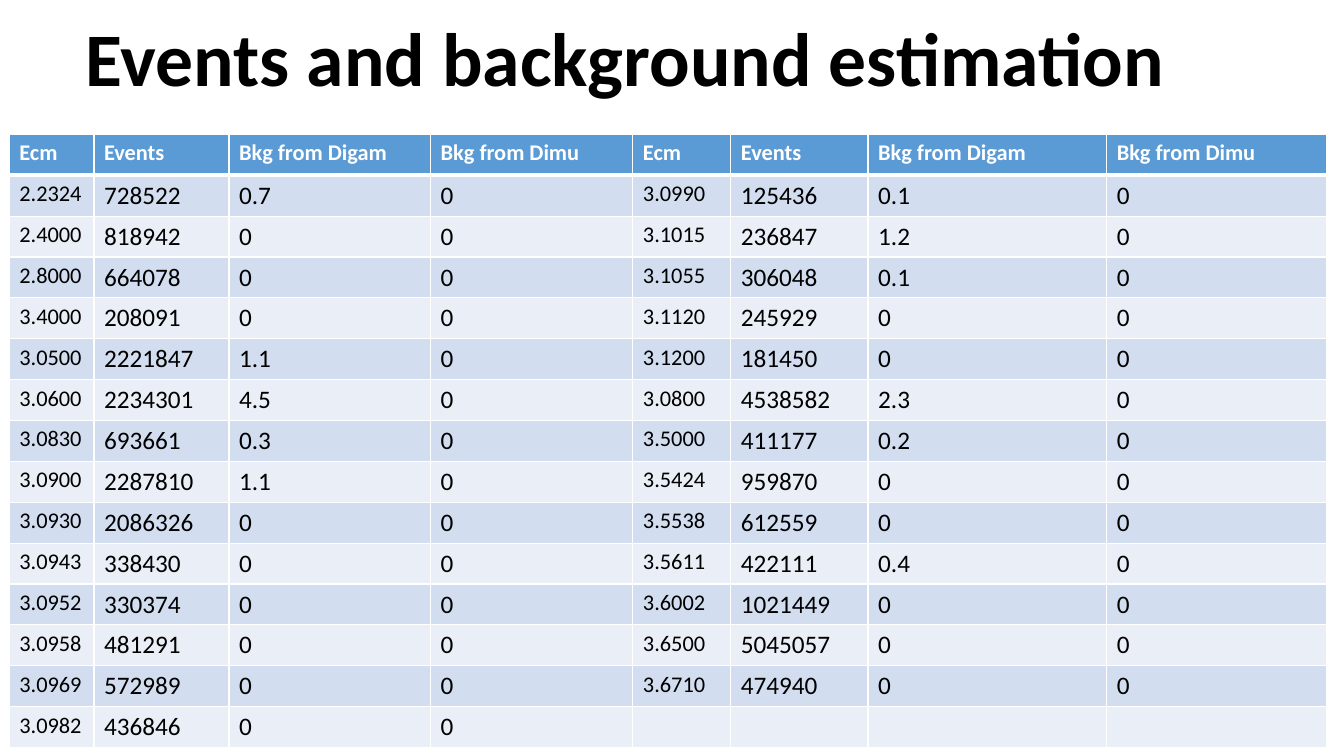
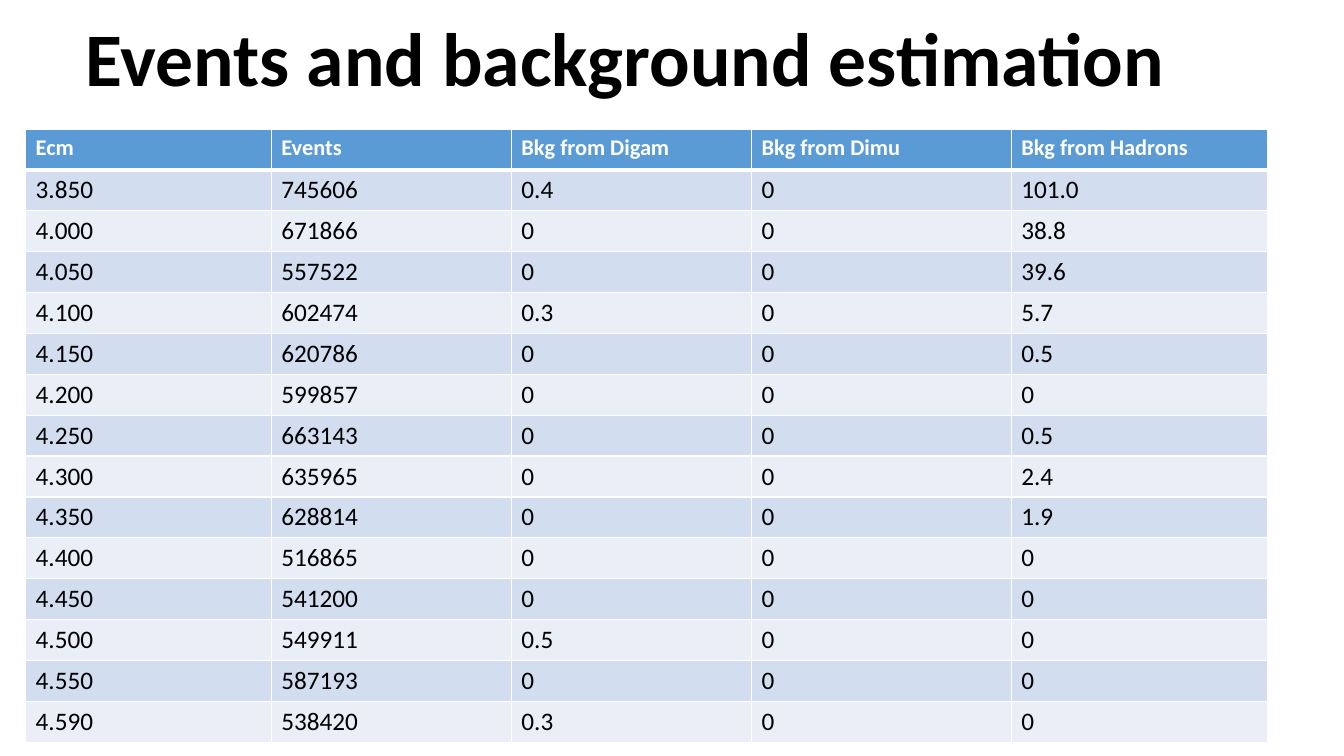
from lxml.etree import SubElement
from pptx import Presentation
from pptx.dml.color import RGBColor
from pptx.enum.text import MSO_ANCHOR, MSO_AUTO_SIZE, PP_ALIGN
from pptx.oxml.ns import qn
from pptx.util import Pt

COLORS = {"header": "5B9BD5", "odd": "D2DEEF", "even": "EAEFF7",
          "white": "FFFFFF", "text": "000000"}
FONT = "Calibri"
TITLE = "Events and background estimation"
ROW_HEIGHT = 29.17
HEADINGS = ("Ecm", "Events", "Bkg from Digam", "Bkg from Dimu")

LOW_ENERGIES = [
    ("2.2324", "728522", "0.7", "0"),
    ("2.4000", "818942", "0", "0"),
    ("2.8000", "664078", "0", "0"),
    ("3.4000", "208091", "0", "0"),
    ("3.0500", "2221847", "1.1", "0"),
    ("3.0600", "2234301", "4.5", "0"),
    ("3.0830", "693661", "0.3", "0"),
    ("3.0900", "2287810", "1.1", "0"),
    ("3.0930", "2086326", "0", "0"),
    ("3.0943", "338430", "0", "0"),
    ("3.0952", "330374", "0", "0"),
    ("3.0958", "481291", "0", "0"),
    ("3.0969", "572989", "0", "0"),
    ("3.0982", "436846", "0", "0"),
]
MIDDLE_ENERGIES = [
    ("3.0990", "125436", "0.1", "0"),
    ("3.1015", "236847", "1.2", "0"),
    ("3.1055", "306048", "0.1", "0"),
    ("3.1120", "245929", "0", "0"),
    ("3.1200", "181450", "0", "0"),
    ("3.0800", "4538582", "2.3", "0"),
    ("3.5000", "411177", "0.2", "0"),
    ("3.5424", "959870", "0", "0"),
    ("3.5538", "612559", "0", "0"),
    ("3.5611", "422111", "0.4", "0"),
    ("3.6002", "1021449", "0", "0"),
    ("3.6500", "5045057", "0", "0"),
    ("3.6710", "474940", "0", "0"),
    ("", "", "", ""),
]
HIGH_ENERGIES = [
    ("3.850", "745606", "0.4", "0", "101.0"),
    ("4.000", "671866", "0", "0", "38.8"),
    ("4.050", "557522", "0", "0", "39.6"),
    ("4.100", "602474", "0.3", "0", "5.7"),
    ("4.150", "620786", "0", "0", "0.5"),
    ("4.200", "599857", "0", "0", "0"),
    ("4.250", "663143", "0", "0", "0.5"),
    ("4.300", "635965", "0", "0", "2.4"),
    ("4.350", "628814", "0", "0", "1.9"),
    ("4.400", "516865", "0", "0", "0"),
    ("4.450", "541200", "0", "0", "0"),
    ("4.500", "549911", "0.5", "0", "0"),
    ("4.550", "587193", "0", "0", "0"),
    ("4.590", "538420", "0.3", "0", "0"),
]

SLIDES = [
    {"left": 6.6, "top": 96, "ecm_size": 16,
     "widths": (60.5, 96.5, 144, 144.5, 70, 98, 170.5, 157),
     "rows": [HEADINGS * 2] + [low + middle for low, middle
                               in zip(LOW_ENERGIES, MIDDLE_ENERGIES)]},
    {"left": 18.3, "top": 92.2, "ecm_size": 18,
     "widths": (175.5, 171.5, 171.5, 185.5, 183),
     "rows": [HEADINGS + ("Bkg from Hadrons",)] + HIGH_ENERGIES},
]


def rgb(name):
    return RGBColor.from_string(COLORS[name])


def style_font(font, size, color, bold):
    font.name, font.size, font.bold = FONT, Pt(size), bold
    font.color.rgb = rgb(color)


def add_borders(cell, top, bottom):
    properties = cell._tc.get_or_add_tcPr()
    for side, width in (("L", 1), ("R", 1), ("T", top), ("B", bottom)):
        line = SubElement(properties, qn(f"a:ln{side}"), w=str(Pt(width)))
        fill = SubElement(line, qn("a:solidFill"))
        SubElement(fill, qn("a:srgbClr"), val=COLORS["white"])


def add_title(slide):
    title = slide.shapes.title
    title.left, title.top, title.width, title.height = Pt(54), Pt(5), Pt(828), Pt(79)
    frame = title.text_frame
    frame.text = TITLE
    frame.auto_size = MSO_AUTO_SIZE.NONE
    frame.vertical_anchor = MSO_ANCHOR.MIDDLE
    paragraph = frame.paragraphs[0]
    paragraph.alignment = PP_ALIGN.LEFT
    paragraph.line_spacing = 0.9
    style_font(paragraph.font, 54, "text", True)


def add_event_table(slide, content):
    rows, widths = content["rows"], content["widths"]
    table = slide.shapes.add_table(
        len(rows), len(widths), Pt(content["left"]), Pt(content["top"]),
        Pt(sum(widths)), Pt(ROW_HEIGHT * len(rows))).table
    for column, width in zip(table.columns, widths):
        column.width = Pt(width)
    for r, values in enumerate(rows):
        table.rows[r].height = Pt(ROW_HEIGHT)
        header = r == 0
        band = "header" if header else "odd" if r % 2 else "even"
        for c, value in enumerate(values):
            cell = table.cell(r, c)
            add_borders(cell, 3 if r == 1 else 1, 3 if header else 1)
            cell.fill.solid()
            cell.fill.fore_color.rgb = rgb(band)
            cell.text = value
            size = 16 if header else content["ecm_size"] if rows[0][c] == "Ecm" else 18
            style_font(cell.text_frame.paragraphs[0].font, size,
                       "white" if header else "text", header)


def main():
    deck = Presentation()
    deck.slide_width, deck.slide_height = Pt(960), Pt(540)
    for content in SLIDES:
        slide = deck.slides.add_slide(deck.slide_layouts[5])
        add_title(slide)
        add_event_table(slide, content)
    deck.save("out.pptx")


if __name__ == "__main__":
    main()
